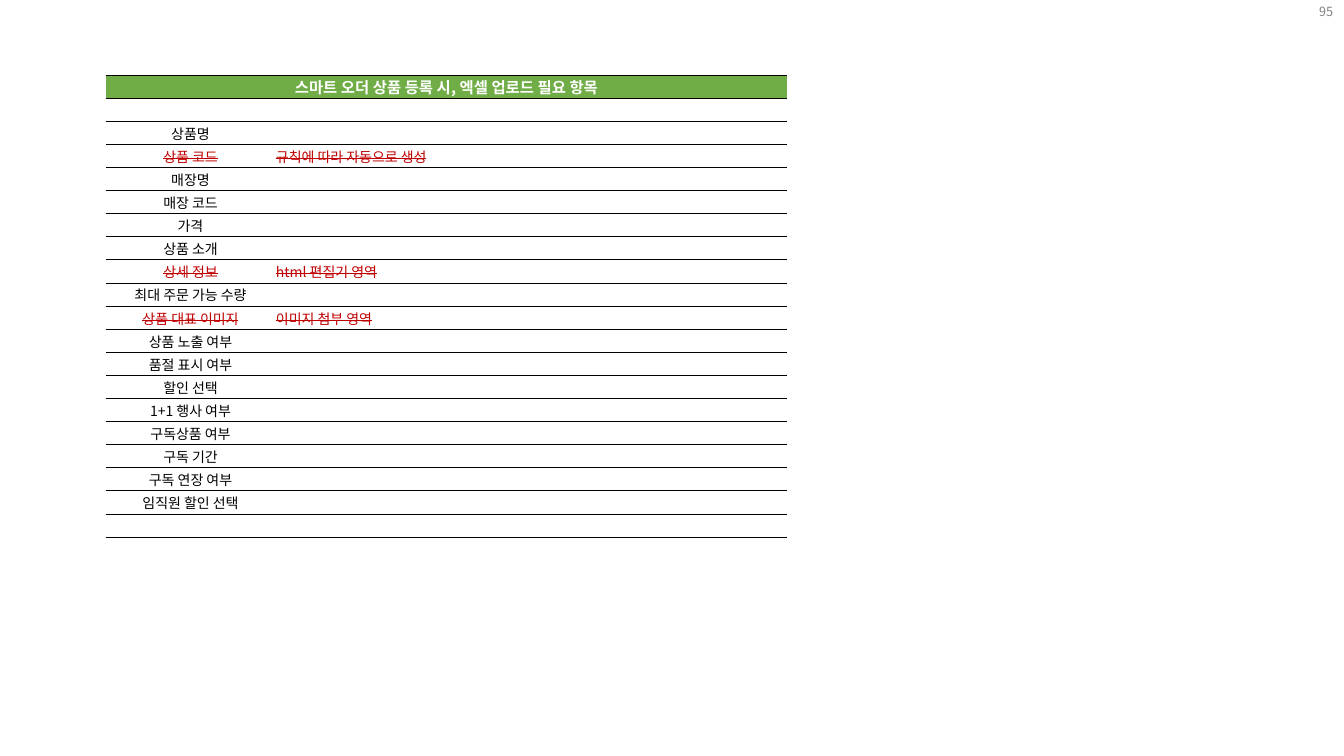
from lxml import etree
from pptx import Presentation
from pptx import util as u
from pptx.dml.color import RGBColor
from pptx.enum import text
from pptx.oxml import parse_xml
from pptx.oxml.ns import nsdecls, qn

HEADING = "스마트 오더 상품 등록 시, 엑셀 업로드 필요 항목"
ITEMS = [
    "상품명", "상품 코드", "매장명", "매장 코드", "가격", "상품 소개", "상세 정보",
    "최대 주문 가능 수량", "상품 대표 이미지", "상품 노출 여부", "품절 표시 여부",
    "할인 선택", "1+1 행사 여부", "구독상품 여부", "구독 기간", "구독 연장 여부",
    "임직원 할인 선택",
]
EXCLUDED = {
    "상품 코드": "규칙에 따라 자동으로 생성",
    "상세 정보": "html 편집기 영역",
    "상품 대표 이미지": "이미지 첨부 영역",
}
PAGE_NUMBER = "95"

FONT = "Noto Sans CJK KR"
GREEN = RGBColor(0x70, 0xAD, 0x47)
RED = RGBColor(0xC0, 0x00, 0x00)
GRAY = RGBColor(0x80, 0x80, 0x80)
BLACK = RGBColor(0x00, 0x00, 0x00)
WHITE = RGBColor(0xFF, 0xFF, 0xFF)

SLIDE_SIZE = (1344, 756)
PAGE_BOX = (1041, -8, 302, 40)
TABLE_BOX = (106, 75, 681, 462)
COLUMN_WIDTHS = (169, 512)
CELL_MARGINS = {"margin_left": 1, "margin_right": 1, "margin_top": 1, "margin_bottom": 0}
NO_STYLE = "{2D5ABB26-0587-4C30-8999-92F81FD0307C}"

CENTER, LEFT, RIGHT = text.PP_ALIGN.CENTER, text.PP_ALIGN.LEFT, text.PP_ALIGN.RIGHT


def px(length):
    return u.Emu(round(length * 914400 / 100.8))


def write(paragraph, words, size, color, alignment, bold=False, strike=False):
    paragraph.alignment = alignment
    run = paragraph.add_run()
    run.text = words
    for name, value in {"name": FONT, "size": u.Pt(size), "bold": bold}.items():
        setattr(run.font, name, value)
    run.font.color.rgb = color
    properties = run._r.get_or_add_rPr()
    etree.SubElement(properties, qn("a:ea"), typeface=FONT)
    if strike:
        properties.set("strike", "sngStrike")


def format_cell(cell, fill=None):
    for name, value in CELL_MARGINS.items():
        setattr(cell, name, px(value))
    cell.vertical_anchor = text.MSO_ANCHOR.MIDDLE
    for side in ("lnT", "lnB"):
        cell._tc.get_or_add_tcPr().append(parse_xml(
            f'<a:{side} {nsdecls("a")} w="6350"><a:solidFill>'
            f'<a:srgbClr val="{BLACK}"/></a:solidFill></a:{side}>'))
    if fill is None:
        cell.fill.background()
    else:
        cell.fill.solid()
        cell.fill.fore_color.rgb = fill


def add_page_number(slide):
    frame = slide.shapes.add_textbox(*map(px, PAGE_BOX)).text_frame
    frame.word_wrap = True
    frame.vertical_anchor = text.MSO_ANCHOR.MIDDLE
    write(frame.paragraphs[0], PAGE_NUMBER, 9, GRAY, RIGHT)


def add_item_table(slide):
    rows = [(HEADING, ""), ("", "")]
    rows += [(item, EXCLUDED.get(item, "")) for item in ITEMS]
    rows.append(("", ""))
    table = slide.shapes.add_table(len(rows), len(COLUMN_WIDTHS), *map(px, TABLE_BOX)).table
    table.first_row = table.horz_banding = False
    table._tbl.tblPr.find(qn("a:tableStyleId")).text = NO_STYLE
    for column, width in zip(table.columns, COLUMN_WIDTHS):
        column.width = px(width)
    for index, row in enumerate(rows):
        table.rows[index].height = px(TABLE_BOX[3] / len(rows))
        heading = index == 0
        excluded = row[0] in EXCLUDED
        for column, words in enumerate(row):
            cell = table.cell(index, column)
            format_cell(cell, GREEN if heading else None)
            paragraph = cell.text_frame.paragraphs[0]
            if not words:
                etree.SubElement(paragraph._p, qn("a:endParaRPr"), sz="1000")
            elif heading:
                write(paragraph, words, 11, WHITE, CENTER, bold=True)
            else:
                write(paragraph, words, 10, RED if excluded else BLACK,
                      LEFT if column else CENTER, strike=excluded)
    table.cell(0, 0).merge(table.cell(0, 1))


def main():
    presentation = Presentation()
    presentation.slide_width, presentation.slide_height = map(px, SLIDE_SIZE)
    slide = presentation.slides.add_slide(presentation.slide_layouts[6])
    add_page_number(slide)
    add_item_table(slide)
    presentation.save("out.pptx")


if __name__ == "__main__":
    main()
